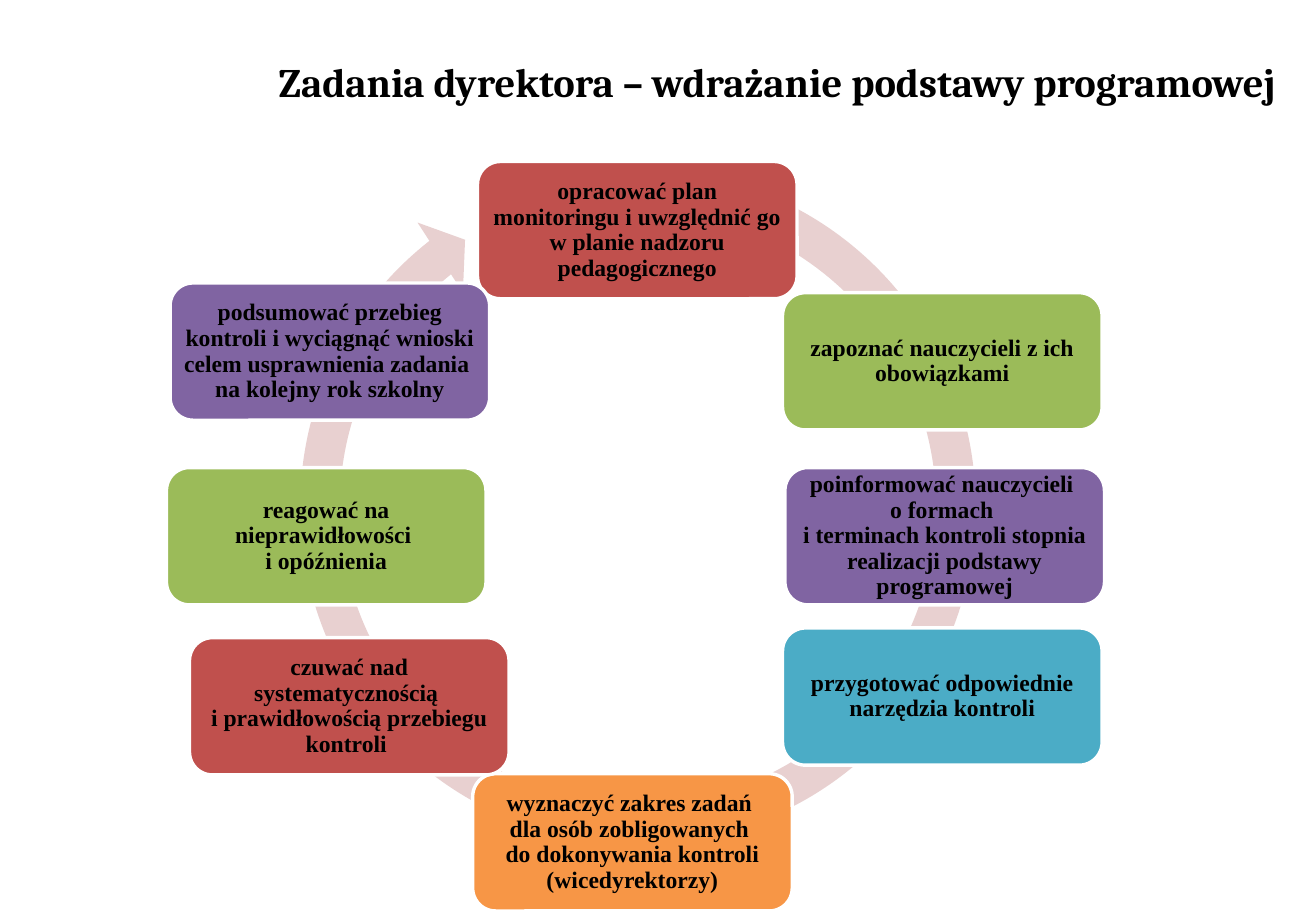
from dataclasses import dataclass

from pptx import Presentation
from pptx.dml.color import RGBColor
from pptx.enum.shapes import MSO_SHAPE
from pptx.enum.text import MSO_ANCHOR, PP_ALIGN
from pptx.slide import Slide
from pptx.text.text import TextFrame
from pptx.util import Inches, Pt

COLORS = {
    "red": "C0504D",
    "green": "9BBB59",
    "purple": "8064A2",
    "blue": "4BACC6",
    "orange": "F79646",
    "ring": "E8D0D0",
    "border": "FFFFFF",
    "text": "000000",
}
TASK_WIDTH, TASK_HEIGHT = 2.63, 1.13
TASK_INSET = 0.06
RING_ADJUSTMENTS = (0.055, 3.307, 138.929, 173.152, 0.058)


@dataclass(frozen=True)
class Task:
    left: float
    top: float
    color: str
    lines: tuple[str, ...]


# Clockwise from the top; a space before a break is part of the wording
TASKS = [
    Task(3.93, 1.33, "red", (
        "opracować plan monitoringu i uwzględnić go w planie nadzoru pedagogicznego",)),
    Task(6.44, 2.41, "green", ("zapoznać nauczycieli z ich obowiązkami",)),
    Task(6.46, 3.85, "purple", (
        "poinformować nauczycieli ", "o formach ",
        "i terminach kontroli stopnia realizacji podstawy programowej")),
    Task(6.44, 5.17, "blue", ("przygotować odpowiednie narzędzia kontroli",)),
    Task(3.89, 6.37, "orange", (
        "wyznaczyć zakres zadań ", "dla osób zobligowanych ",
        "do dokonywania kontroli (wicedyrektorzy)")),
    Task(1.56, 5.25, "red", (
        "czuwać nad systematycznością ", "i prawidłowością przebiegu kontroli ")),
    Task(1.37, 3.85, "green", ("reagować na nieprawidłowości ", "i opóźnienia")),
    Task(1.40, 2.33, "purple", (
        "podsumować przebieg kontroli i wyciągnąć wnioski celem usprawnienia zadania ",
        "na kolejny rok szkolny")),
]


def rgb(name: str) -> RGBColor:
    return RGBColor.from_string(COLORS[name])


def write_text(frame: TextFrame, lines: tuple[str, ...], font_name: str,
               size: float, line_spacing: float = 1.0) -> None:
    frame.word_wrap = True
    frame.vertical_anchor = MSO_ANCHOR.MIDDLE
    paragraph = frame.paragraphs[0]
    paragraph.alignment = PP_ALIGN.CENTER
    paragraph.line_spacing = line_spacing
    for index, line in enumerate(lines):
        if index:
            paragraph.add_line_break()
        run = paragraph.add_run()
        run.text = line
        run.font.name = font_name
        run.font.size = Pt(size)
        run.font.bold = True
        run.font.color.rgb = rgb("text")


def draw_title(slide: Slide, title: str) -> None:
    box = slide.shapes.add_textbox(Inches(2.12), Inches(0.16), Inches(8.55), Inches(1.02))
    write_text(box.text_frame, (title,), "Cambria", 24)


def draw_ring(slide: Slide) -> None:
    ring = slide.shapes.add_shape(
        MSO_SHAPE.CIRCULAR_ARROW, Inches(2.29), Inches(1.21), Inches(5.92), Inches(5.92))
    for index, value in enumerate(RING_ADJUSTMENTS):
        ring.adjustments[index] = value
    ring.shadow.inherit = False
    ring.fill.solid()
    ring.fill.fore_color.rgb = rgb("ring")
    ring.line.fill.background()


def draw_task(slide: Slide, task: Task) -> None:
    shape = slide.shapes.add_shape(
        MSO_SHAPE.ROUNDED_RECTANGLE, Inches(task.left), Inches(task.top),
        Inches(TASK_WIDTH), Inches(TASK_HEIGHT))
    shape.shadow.inherit = False
    shape.fill.solid()
    shape.fill.fore_color.rgb = rgb(task.color)
    shape.line.color.rgb = rgb("border")
    shape.line.width = Pt(2)
    frame = shape.text_frame
    frame.margin_left = frame.margin_right = Inches(TASK_INSET)
    frame.margin_top = frame.margin_bottom = Inches(TASK_INSET)
    write_text(frame, task.lines, "Times New Roman", 14, line_spacing=0.9)


def main() -> None:
    presentation = Presentation()
    presentation.slide_width = Inches(10.83)
    presentation.slide_height = Inches(7.5)
    slide = presentation.slides.add_slide(presentation.slide_layouts[6])

    # Heading
    draw_title(slide, "Zadania dyrektora – wdrażanie podstawy programowej")

    # Cycle: ring behind, tasks on top
    draw_ring(slide)
    for task in TASKS:
        draw_task(slide, task)

    presentation.save("out.pptx")


if __name__ == "__main__":
    main()
